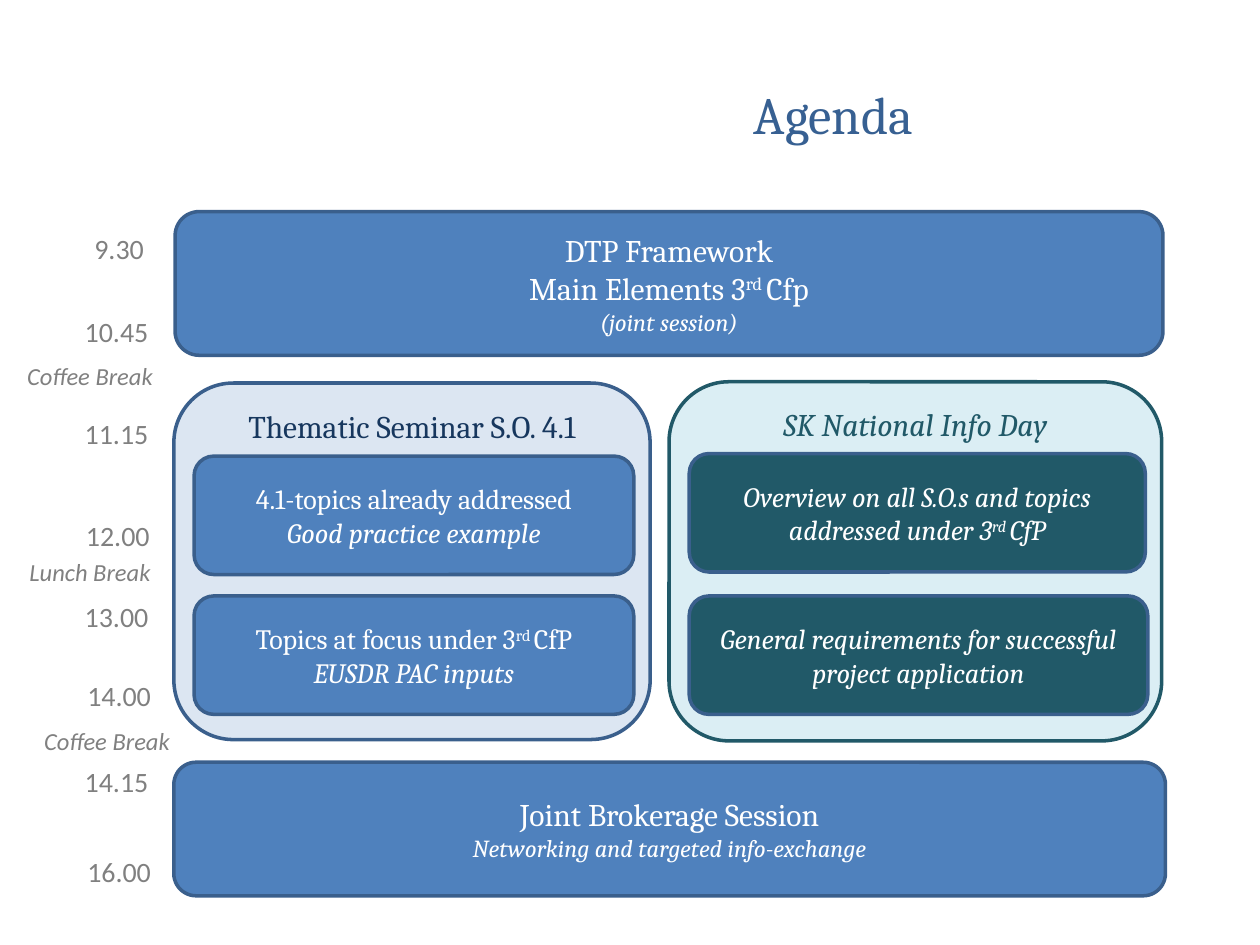
import pptx
import pptx.dml.color
import pptx.enum.shapes
import pptx.enum.text
import pptx.util
from pptx.util import Inches

COLORS = {
    "blue": "4F81BD", "outline": "3A5F8C", "pale blue": "DCE6F2",
    "navy": "17375E", "title": "376092", "teal": "215968",
    "pale teal": "DBEEF4", "white": "FFFFFF", "gray": "808080",
}


def color(name):
    return pptx.dml.color.RGBColor.from_string(COLORS[name])


def write_lines(shape, lines, font_name, color_name, anchor):
    """Write centred (text, size, italic) lines; text between bars is superscript."""
    frame = shape.text_frame
    frame.word_wrap = True
    frame.vertical_anchor = anchor
    for index, (text, size, italic) in enumerate(lines):
        paragraph = frame.add_paragraph() if index else frame.paragraphs[0]
        paragraph.alignment = pptx.enum.text.PP_ALIGN.CENTER
        for part_index, part in enumerate(text.split("|")):
            run = paragraph.add_run()
            run.text = part
            run.font.name = font_name
            run.font.size = pptx.util.Pt(size)
            run.font.italic = italic
            run.font.color.rgb = color(color_name)
            if part_index % 2:
                run._r.get_or_add_rPr().set("baseline", "30000")


TOP = pptx.enum.text.MSO_ANCHOR.TOP
MIDDLE = pptx.enum.text.MSO_ANCHOR.MIDDLE

presentation = pptx.Presentation()
presentation.slide_width = Inches(10)
presentation.slide_height = Inches(7.5)
slide = presentation.slides.add_slide(presentation.slide_layouts[5])

title = slide.shapes.title
title.left, title.top = Inches(3.74), Inches(0.6)
title.width, title.height = Inches(5.75), Inches(0.79)
write_lines(title, [("Agenda", 30, False)], "Cambria", "title", TOP)

# Panels come first so that the session boxes lie on top of them:
# left, top, width, height, fill, line, text colour, anchor, lines
sessions = [
    (1.38, 3.04, 3.78, 2.83, "pale blue", "outline", "navy", TOP,
     [("Thematic Seminar S.O. 4.1", 18, False)]),
    (5.31, 3.03, 3.91, 2.85, "pale teal", "teal", "teal", TOP,
     [("SK National Info Day", 18, True)]),
    (1.39, 1.68, 7.84, 1.14, "blue", "outline", "white", MIDDLE,
     [("DTP Framework", 18, False),
      ("Main Elements 3|rd |Cfp", 18, False),
      ("(joint session)", 14, True)]),
    (1.54, 3.62, 3.49, 0.94, "blue", "outline", "white", MIDDLE,
     [("4.1-topics already addressed", 16, False),
      ("Good practice example", 16, True)]),
    (5.47, 3.6, 3.62, 0.94, "teal", "outline", "white", MIDDLE,
     [("Overview on all S.O.s and topics addressed under 3|rd |CfP", 16, True)]),
    (1.54, 4.73, 3.49, 0.94, "blue", "outline", "white", MIDDLE,
     [("Topics at focus under 3|rd |CfP", 16, False),
      ("EUSDR PAC inputs", 16, True)]),
    (5.47, 4.73, 3.64, 0.94, "teal", "outline", "white", MIDDLE,
     [("General requirements for successful project application", 16, True)]),
    (1.38, 6.05, 7.87, 1.06, "blue", "outline", "white", MIDDLE,
     [("Joint Brokerage Session", 18, False),
      ("Networking and targeted info-exchange", 14, True)]),
]
for left, top, width, height, fill, line, text_color, anchor, lines in sessions:
    box = slide.shapes.add_shape(
        pptx.enum.shapes.MSO_SHAPE.ROUNDED_RECTANGLE,
        Inches(left), Inches(top), Inches(width), Inches(height))
    box.shadow.inherit = False
    box.fill.solid()
    box.fill.fore_color.rgb = color(fill)
    box.line.color.rgb = color(line)
    box.line.width = pptx.util.Pt(2)
    write_lines(box, lines, "Cambria", text_color, anchor)

times = [
    ("9.30", 0.59, 1.79), ("10.45", 0.57, 2.45), ("11.15", 0.57, 3.26),
    ("12.00", 0.58, 4.07), ("13.00", 0.57, 4.71), ("14.00", 0.59, 5.34),
    ("14.15", 0.57, 6.02), ("16.00", 0.59, 6.73),
]
breaks = [
    ("Coffee Break", -0.27, 2.82, 1.97),
    ("Lunch Break", -0.27, 4.37, 1.97),
    ("Coffee Break", 0, 5.71, 1.7),
]
labels = [(*time, 0.71, 0.37, 16, False) for time in times]
labels += [(*pause, 0.34, 14, True) for pause in breaks]
for text, left, top, width, height, size, italic in labels:
    label = slide.shapes.add_textbox(
        Inches(left), Inches(top), Inches(width), Inches(height))
    write_lines(label, [(text, size, italic)], "Calibri", "gray", TOP)

presentation.save("out.pptx")
